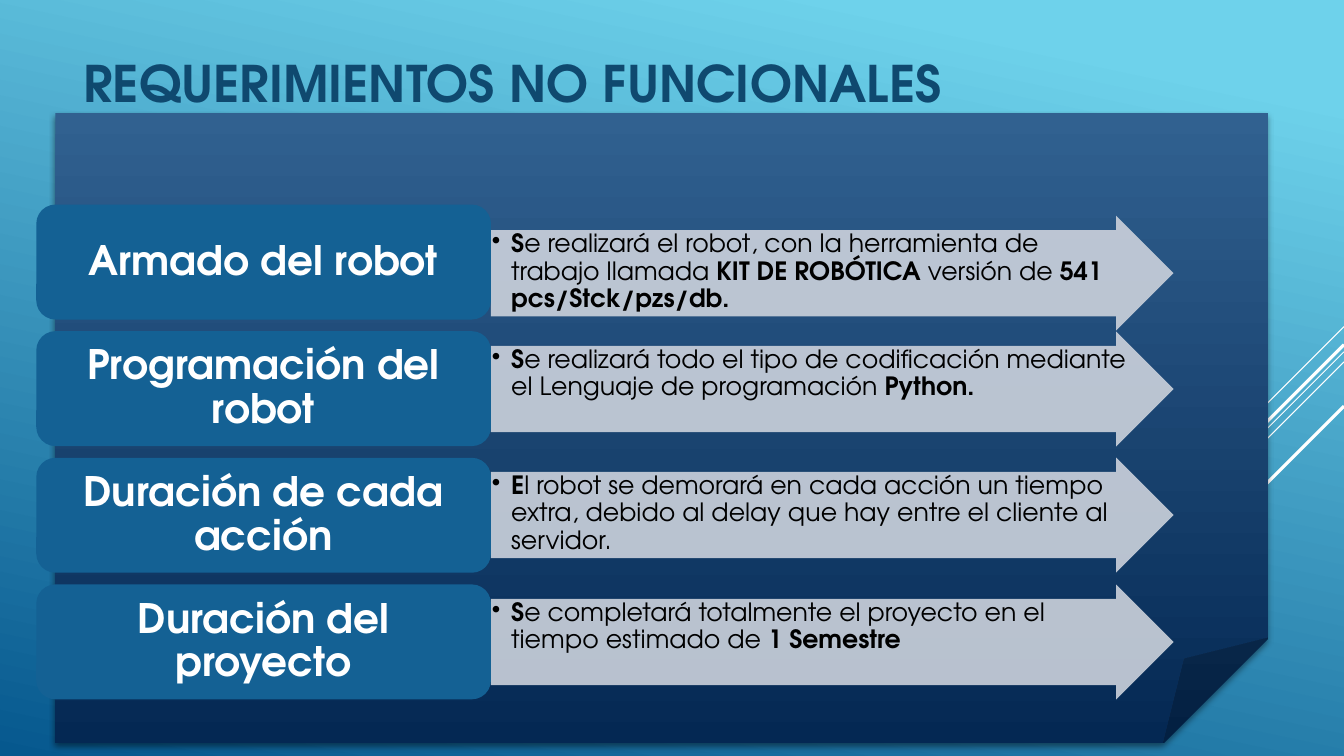
"""Build the slide of non-functional requirements for a robot project."""
from lxml.etree import SubElement
from pptx import Presentation
from pptx.dml.color import RGBColor
from pptx.enum.shapes import MSO_CONNECTOR, MSO_SHAPE
from pptx.enum.text import MSO_ANCHOR, PP_ALIGN
from pptx.oxml.ns import qn
from pptx.util import Inches, Pt

FONT = "TeX Gyre Adventor"


def write(frame, text, size, color, align=PP_ALIGN.LEFT, anchor=MSO_ANCHOR.MIDDLE,
          inset=(0.1, 0.05), spacing=1.0):
    """Write text whose parts, divided by |, alternate between bold and regular."""
    frame.word_wrap = True
    frame.vertical_anchor = anchor
    frame.margin_left = frame.margin_right = Inches(inset[0])
    frame.margin_top = frame.margin_bottom = Inches(inset[1])
    paragraph = frame.paragraphs[0]
    paragraph.alignment = align
    paragraph.line_spacing = spacing
    for index, part in enumerate(text.split("|")):
        run = paragraph.add_run()
        run.text = part
        run.font.name = FONT
        run.font.size = Pt(size)
        run.font.bold = index % 2 == 0
        run.font.color.rgb = RGBColor.from_string(color)
    return paragraph


def shade(fill, angle, stops):
    """Fill with a two-stop gradient turned clockwise by the angle."""
    fill.gradient()
    fill.gradient_angle = 360 - angle
    for stop, (position, color) in zip(fill.gradient_stops, stops):
        stop.position = position
        stop.color.rgb = RGBColor.from_string(color)


deck = Presentation()
deck.slide_width = Inches(13.33)
deck.slide_height = Inches(7.5)
slide = deck.slides.add_slide(deck.slide_layouts[5])
shade(slide.background.fill, 102, [(0.1, "6ED2EB"), (1, "06588E")])

rays = [(3.24, 1, 0.75), (3.49, 3.26, 0.75), (3.59, 2.07, 0.75),
        (3.42, 1.91, 2.25), (4.03, 1.39, 2.25)]
for top, reach, weight in rays:
    ray = slide.shapes.add_connector(
        MSO_CONNECTOR.STRAIGHT, Inches(13.33), Inches(top),
        Inches(13.33 - reach), Inches(top + reach))
    ray.line.color.rgb = RGBColor.from_string("FFFFFF")
    ray.line.width = Pt(weight)
    SubElement(ray.line._get_or_add_ln().getparent(), qn("a:effectLst"))

panel = slide.shapes.add_shape(
    MSO_SHAPE.FOLDED_CORNER, Inches(0.55), Inches(1.12), Inches(12.03), Inches(6.25))
shade(panel.fill, 90, [(0, "316190"), (1, "042853")])
panel.line.fill.background()
panel.shadow.inherit = False
panel_shadow = SubElement(
    panel._element.spPr.find(qn("a:effectLst")), qn("a:outerShdw"),
    blurRad=str(Pt(4)), dist=str(Pt(3)), dir="5400000", rotWithShape="0")
shadow_color = SubElement(panel_shadow, qn("a:srgbClr"), val="000000")
SubElement(shadow_color, qn("a:alpha"), val="46000")

title = slide.shapes.title
title.left, title.top = Inches(0.73), Inches(0.46)
title.width, title.height = Inches(10.7), Inches(0.71)
write(title.text_frame, "REQUERIMIENTOS NO FUNCIONALES", size=36, color="0F496F")

requirements = [
    ("Armado del robot", 2.14,
     "S|e realizará el robot, con la herramienta de trabajo llamada |"
     "KIT DE ROBÓTICA |versión de |541 pcs/Stck/pzs/db."),
    ("Programación del robot", 3.29,
     "S|e realizará todo el tipo de codificación mediante el Lenguaje de "
     "programación |Python."),
    ("Duración de cada acción", 4.54,
     "E|l robot se demorará en cada acción un tiempo extra, debido al delay "
     "que hay entre el cliente al servidor."),
    ("Duración del proyecto", 5.8,
     "S|e completará totalmente el proyecto en el tiempo estimado de |1 Semestre"),
]
for row, (name, detail_top, detail) in enumerate(requirements):
    arrow = slide.shapes.add_shape(
        MSO_SHAPE.RIGHT_ARROW, Inches(4.87), Inches(detail_top), Inches(6.77), Inches(1.14))
    arrow.adjustments[0] = 0.75
    arrow.adjustments[1] = 0.5
    label = slide.shapes.add_shape(
        MSO_SHAPE.ROUNDED_RECTANGLE, Inches(0.36), Inches(2.03 + 1.256 * row),
        Inches(4.51), Inches(1.14))
    for part, color in ((arrow, "CCD2DC"), (label, "146194")):
        part.fill.solid()
        part.fill.fore_color.rgb = RGBColor.from_string(color)
        part.line.fill.background()
        part.shadow.inherit = False
    arrow_color = arrow._element.spPr.find(qn("a:solidFill")).find(qn("a:srgbClr"))
    SubElement(arrow_color, qn("a:alpha"), val="90000")

    write(label.text_frame, name, size=29, color="FFFFFF", align=PP_ALIGN.CENTER,
          inset=(0.12, 0.06), spacing=0.9)
    point = write(arrow.text_frame, detail, size=18, color="000000",
                  anchor=MSO_ANCHOR.TOP, inset=(0.01, 0.01), spacing=0.9)
    point.level = 1
    point_format = point._p.get_or_add_pPr()
    point_format.set("marL", str(Inches(0.19)))
    point_format.set("indent", str(Inches(-0.19)))
    bullet_color = SubElement(point_format, qn("a:buClr"))
    SubElement(bullet_color, qn("a:srgbClr"), val="000000")
    SubElement(point_format, qn("a:buChar"), char="•")

deck.save("out.pptx")
